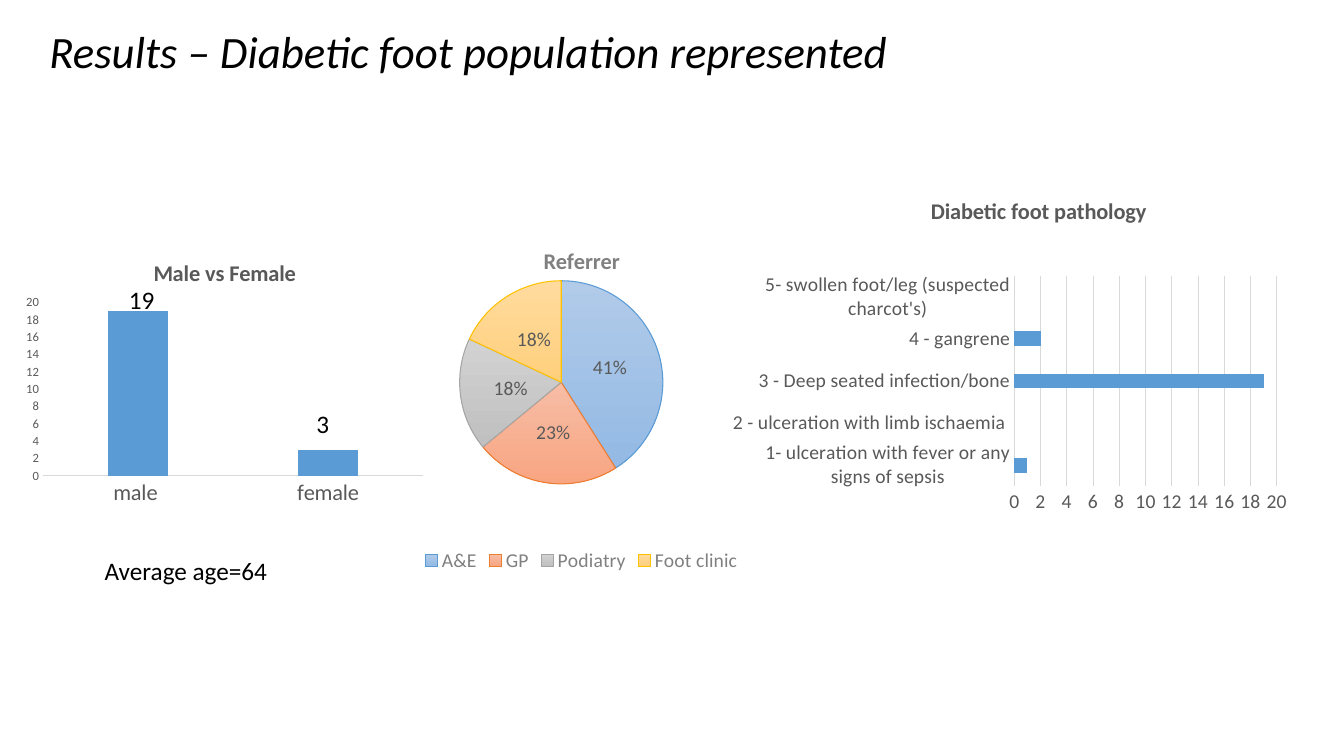
"""Build the slide on the diabetic foot population."""
from dataclasses import dataclass

from lxml.etree import SubElement
from pptx import Presentation
from pptx.chart.data import CategoryChartData
from pptx.dml.color import RGBColor
from pptx.enum.chart import XL_CHART_TYPE, XL_LABEL_POSITION, XL_LEGEND_POSITION, XL_TICK_MARK
from pptx.enum.text import MSO_ANCHOR, PP_ALIGN
from pptx.oxml.ns import qn
from pptx.util import Inches, Pt


@dataclass(frozen=True)
class Theme:
    """Colours and type sizes of the slide."""
    font: str = "Calibri"
    ink: str = "000000"
    muted: str = "595959"
    soft: str = "808080"
    rule: str = "D9D9D9"
    bar: str = "5B9BD5"
    title_size: int = 32
    text_size: int = 18
    heading_size: int = 16
    label_size: int = 14
    small_size: int = 9
    slices: tuple = (
        ("B1CBE9", "93B9E4", "5B9BD5"),
        ("F7BDA5", "F8A582", "ED7D31"),
        ("D2D2D2", "C0C0C0", "A5A5A5"),
        ("FFDB9E", "FFD07C", "FFC000"),
    )


THEME = Theme()
WIDTH, HEIGHT = Inches(13.33), Inches(7.5)
COLUMNS, ROWS = 40, 30


def grid(column, row, columns, rows):
    """Turn grid units into left, top, width and height."""
    return (round(WIDTH * column / COLUMNS), round(HEIGHT * row / ROWS),
            round(WIDTH * columns / COLUMNS), round(HEIGHT * rows / ROWS))


def style_font(font, size, color, bold=False, italic=False):
    """Give a font the theme's typeface, a size and a colour."""
    font.name, font.size = THEME.font, Pt(size)
    font.bold, font.italic = bold, italic
    font.color.rgb = RGBColor.from_string(color)


def style_line(line, color, width=0.75):
    """Draw a line in one colour."""
    line.color.rgb = RGBColor.from_string(color)
    line.width = Pt(width)


def set_title(slide, text, place):
    """Fill and place the title placeholder."""
    title = slide.shapes.title
    title.left, title.top, title.width, title.height = grid(*place)
    frame = title.text_frame
    frame.text = text
    frame.vertical_anchor = MSO_ANCHOR.MIDDLE
    paragraph = frame.paragraphs[0]
    paragraph.alignment = PP_ALIGN.LEFT
    paragraph.line_spacing = 0.9
    style_font(paragraph.font, THEME.title_size, THEME.ink, italic=True)


def add_text(slide, text, place):
    """Add a line of text."""
    frame = slide.shapes.add_textbox(*grid(*place)).text_frame
    frame.word_wrap = True
    frame.text = text
    style_font(frame.paragraphs[0].font, THEME.text_size, THEME.ink)


def set_plot_area(chart, shares):
    """Fix the inner plot area as shares of the chart."""
    plot_area = chart._chartSpace.chart.plotArea
    for old_layout in plot_area.findall(qn("c:layout")):
        plot_area.remove(old_layout)
    layout = SubElement(plot_area, qn("c:layout"))
    plot_area.insert(0, layout)
    manual = SubElement(layout, qn("c:manualLayout"))
    settings = [("layoutTarget", "inner"), ("xMode", "edge"), ("yMode", "edge")]
    settings += zip("xywh", shares)
    for name, value in settings:
        SubElement(manual, qn(f"c:{name}")).set("val", str(value))


def add_chart(slide, kind, heading, values, place, shares, color=THEME.muted):
    """Add a chart with a heading and a fixed plot area."""
    data = CategoryChartData()
    data.categories = list(values)
    data.add_series("Series 1", list(values.values()))
    chart = slide.shapes.add_chart(kind, *grid(*place), data).chart
    style_font(chart.font, THEME.label_size, THEME.muted)
    chart.has_legend = False
    chart.has_title = True
    chart.chart_title.text_frame.text = heading
    paragraph = chart.chart_title.text_frame.paragraphs[0]
    style_font(paragraph.font, THEME.heading_size, color, bold=True)
    set_plot_area(chart, shares)
    return chart


def style_bars(chart, gap, overlap, category_size, value_size, gridlines):
    """Style the bars and axes of a bar or column chart."""
    plot = chart.plots[0]
    plot.gap_width, plot.overlap, plot.vary_by_categories = gap, overlap, False
    fill = plot.series[0].format.fill
    fill.solid()
    fill.fore_color.rgb = RGBColor.from_string(THEME.bar)
    axes = ((chart.category_axis, category_size), (chart.value_axis, value_size))
    for axis, size in axes:
        axis.major_tick_mark = axis.minor_tick_mark = XL_TICK_MARK.NONE
        style_font(axis.tick_labels.font, size, THEME.muted)
    style_line(chart.category_axis.format.line, THEME.rule)
    value_axis = chart.value_axis
    value_axis.format.line.fill.background()
    value_axis.minimum_scale, value_axis.maximum_scale = 0, 20
    value_axis.major_unit = 2
    value_axis.has_major_gridlines = gridlines
    if gridlines:
        style_line(value_axis.major_gridlines.format.line, THEME.rule)


def style_pie(chart):
    """Style the slices, percentages and legend of a pie chart."""
    plot = chart.plots[0]
    for index, (start, end, outline) in enumerate(THEME.slices):
        slice_format = plot.series[0].points[index].format
        fill = slice_format.fill
        fill.gradient()
        fill.gradient_angle = 270
        for stop, color in zip(fill.gradient_stops, (start, end)):
            stop.color.rgb = RGBColor.from_string(color)
        style_line(slice_format.line, outline)
    plot.has_data_labels = True
    labels = plot.data_labels
    labels.show_percentage, labels.show_value = True, False
    labels.number_format, labels.number_format_is_linked = "0%", False
    labels.position = XL_LABEL_POSITION.CENTER
    style_font(labels.font, THEME.label_size, THEME.muted)
    chart.has_legend = True
    chart.legend.position = XL_LEGEND_POSITION.BOTTOM
    chart.legend.include_in_layout = False
    style_font(chart.legend.font, THEME.label_size, THEME.soft)


def main():
    """Compose and save the slide."""
    presentation = Presentation()
    presentation.slide_width, presentation.slide_height = WIDTH, HEIGHT
    slide = presentation.slides.add_slide(presentation.slide_layouts[5])
    set_title(slide, "Results – Diabetic foot population represented",
              (1.17, -0.76, 34.5, 5.8))

    referrers = {"A&E": 41, "GP": 23, "Podiatry": 18, "Foot clinic": 18}
    style_pie(add_chart(slide, XL_CHART_TYPE.PIE, "Referrer", referrers,
                        (9.75, 9.12, 15.12, 13.76), (0.26, 0.09, 0.4, 0.7), THEME.soft))

    pathologies = {
        "1- ulceration with fever or any signs of sepsis": 1,
        "2 - ulceration with limb ischaemia ": None,
        "3 - Deep seated infection/bone": 19,
        "4 - gangrene": 2,
        "5- swollen foot/leg (suspected charcot's)": None,
    }
    pathology = add_chart(slide, XL_CHART_TYPE.BAR_CLUSTERED, "Diabetic foot pathology",
                          pathologies, (21.81, 7.12, 18.19, 13.68), (0.46, 0.28, 0.43, 0.61))
    style_bars(pathology, 182, 0, THEME.label_size, THEME.label_size, True)

    sexes = add_chart(slide, XL_CHART_TYPE.COLUMN_CLUSTERED, "Male vs Female",
                      {"male ": 19, "female": 3},
                      (0.54, 9.64, 12.3, 10.76), (0.06, 0.22, 0.92, 0.64))
    style_bars(sexes, 219, -27, THEME.heading_size, THEME.small_size, False)

    add_text(slide, "19", (3.54, 11.08, 1.38, 1.6))
    add_text(slide, "3", (9.12, 16, 0.78, 1.68))
    add_text(slide, "Average age=64", (2.82, 21.84, 7.74, 1.6))
    presentation.save("out.pptx")


if __name__ == "__main__":
    main()
